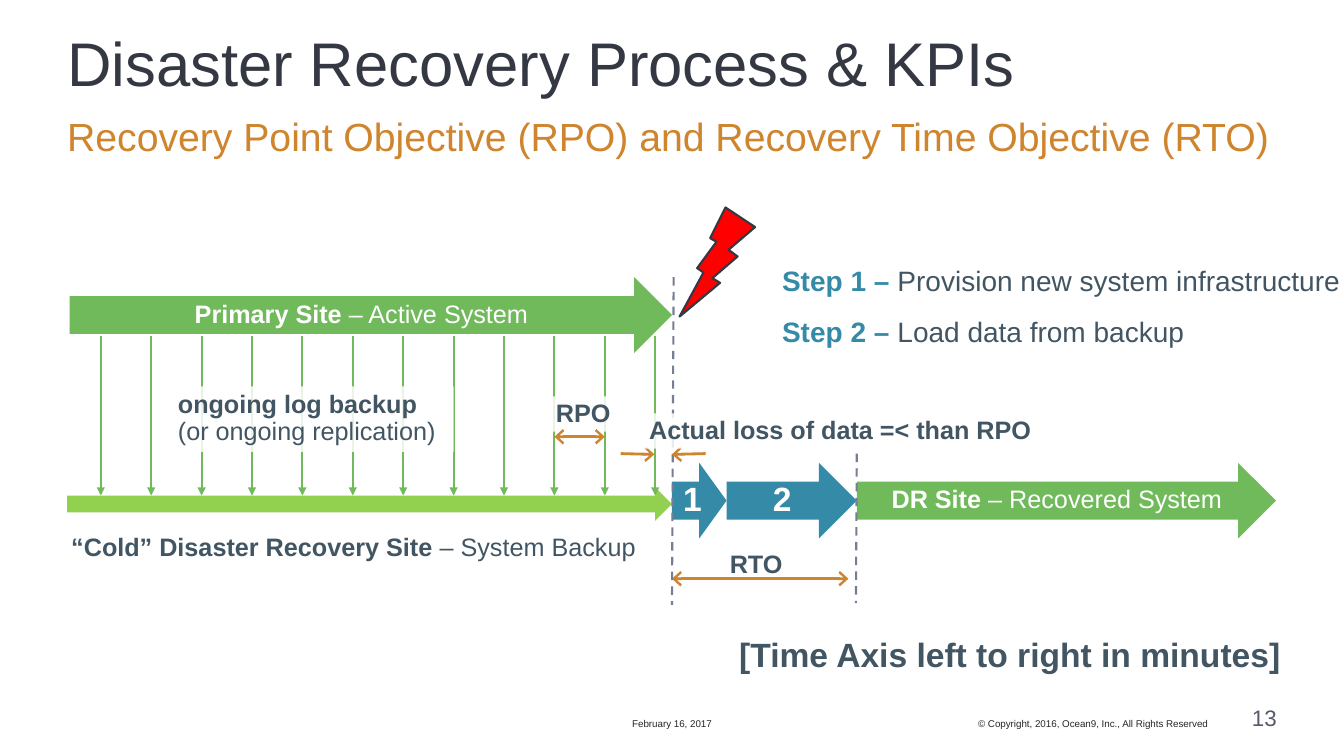
import lxml.etree
import pptx
import pptx.dml.color
import pptx.enum.dml
import pptx.enum.shapes
import pptx.enum.text
import pptx.oxml.ns
import pptx.util

RGB = pptx.dml.color.RGBColor
SHAPE = pptx.enum.shapes.MSO_SHAPE
ALIGN = pptx.enum.text.PP_ALIGN
ANCHOR = pptx.enum.text.MSO_ANCHOR
qn = pptx.oxml.ns.qn

WHITE = RGB(0xFF, 0xFF, 0xFF)
INK = RGB(0x34, 0x38, 0x42)
SLATE = RGB(0x42, 0x55, 0x63)
ORANGE = RGB(0xCF, 0x84, 0x2E)
GREEN = RGB(0x71, 0xBA, 0x5B)
LIME = RGB(0x92, 0xD0, 0x50)
TEAL = RGB(0x34, 0x8A, 0xA7)
RED = RGB(0xFF, 0x00, 0x00)
DASH_GREY = RGB(0x75, 0x7E, 0x94)
FOOTER_GREY = RGB(0x26, 0x26, 0x26)
NUMBER_GREY = RGB(0x55, 0x5B, 0x6B)

COLUMNS, ROWS = 160, 90
CELL = pptx.util.Inches(1 / 12)
DISASTER, RECOVERED = 80, 102
TEXT_INSET = (0.1, 0, 0, 0)
HEAD_WIDTHS = {"triangle": "med", "arrow": "lg"}


def cells(*counts):
    """Turn counts of grid columns or rows into lengths."""
    return [round(n * CELL) for n in counts]


def write(sp, paragraphs, size, color, align=ALIGN.LEFT, spacing=0.9,
          anchor=ANCHOR.TOP, inset=(0, 0, 0, 0), wrap=True):
    """Fill a shape with paragraphs of (text, bold, colour) runs."""
    tf = sp.text_frame
    tf.word_wrap = wrap
    tf.vertical_anchor = anchor
    sides = [pptx.util.Inches(n) for n in inset]
    tf.margin_left, tf.margin_top, tf.margin_right, tf.margin_bottom = sides
    for i, runs in enumerate(paragraphs):
        p = tf.add_paragraph() if i else tf.paragraphs[0]
        p.alignment = align
        p.line_spacing = spacing
        p.font.name = "Arial"
        p.font.size = pptx.util.Pt(size)
        for text, bold, *own_color in runs:
            r = p.add_run()
            r.text = text
            r.font.bold = bold
            r.font.color.rgb = own_color[0] if own_color else color


def add_text(s, box, paragraphs, size, color, **options):
    """Add a text box."""
    write(s.shapes.add_textbox(*cells(*box)), paragraphs, size, color, **options)


def add_block(s, kind, box, fill):
    """Add a filled preset shape without outline or shadow."""
    sp = s.shapes.add_shape(kind, *cells(*box))
    sp.shadow.inherit = False
    sp.fill.solid()
    sp.fill.fore_color.rgb = fill
    sp.line.fill.background()
    return sp


def add_stage(s, box, fill, runs, size=18):
    """Add a labelled block arrow."""
    sp = add_block(s, SHAPE.RIGHT_ARROW, box, fill)
    write(sp, [runs], size, WHITE, align=ALIGN.CENTER, anchor=ANCHOR.MIDDLE,
          inset=(0.1, 0.05, 0.1, 0.05))


def add_label(s, box, paragraphs):
    """Add a label on a translucent white panel."""
    sp = add_block(s, SHAPE.RECTANGLE, box, WHITE)
    tint = sp._element.spPr.find(qn("a:solidFill"))[0]
    lxml.etree.SubElement(tint, qn("a:alpha"), val="85000")
    write(sp, paragraphs, 18, SLATE, anchor=ANCHOR.MIDDLE, inset=TEXT_INSET, wrap=False)


def add_line(s, ends, color, width, head=None, tail=None, dashed=False):
    """Add a straight line with optional arrowheads."""
    line = s.shapes.add_connector(pptx.enum.shapes.MSO_CONNECTOR.STRAIGHT, *cells(*ends))
    line.line.color.rgb = color
    line.line.width = pptx.util.Pt(width)
    if dashed:
        line.line.dash_style = pptx.enum.dml.MSO_LINE.DASH
    ln = line.line._get_or_add_ln()
    for tag, kind in (("a:headEnd", head), ("a:tailEnd", tail)):
        if kind:
            lxml.etree.SubElement(ln, qn(tag), type=kind, w=HEAD_WIDTHS[kind], len="med")
    lxml.etree.SubElement(line._element.spPr, qn("a:effectLst"))


def add_bolt(s):
    """Add the lightning bolt that marks the disaster."""
    sp = add_block(s, SHAPE.LIGHTNING_BOLT, (80.9, 24.7, 9, 13), RED)
    sp.line.color.rgb = INK
    sp.line.width = pptx.util.Pt(1.5)
    sp._element.spPr.find(qn("a:xfrm")).set("flipH", "1")


def add_headings(s):
    """Add the title, subtitle and footer."""
    add_text(s, (8, 4, 144, 9), [[("Disaster Recovery Process & KPIs", False)]], 44, INK)
    add_text(s, (8, 14, 144, 7),
             [[("Recovery Point Objective (RPO) and Recovery Time Objective (RTO)", False)]],
             28, ORANGE)
    footers = [
        ((73.5, 84, 13, 2.8), "February 16, 2017", 7, FOOTER_GREY, ALIGN.CENTER),
        ((91, 84, 52.8, 2.8), "© Copyright, 2016, Ocean9, Inc., All Rights Reserved",
         7, FOOTER_GREY, ALIGN.RIGHT),
        ((145, 84, 7, 3), "13", 16, NUMBER_GREY, ALIGN.RIGHT),
    ]
    for box, text, size, color, align in footers:
        add_text(s, box, [[(text, False)]], size, color, align=align,
                 spacing=1.0, anchor=ANCHOR.BOTTOM, wrap=False)


def add_backup(s):
    """Add the primary site and its backups to the cold site."""
    add_stage(s, (8.3, 33, 71.7, 9), GREEN,
              [("Primary Site ", True), ("– Active System", False)])
    add_block(s, SHAPE.RIGHT_ARROW, (8, 58, 72, 4), LIME)
    add_bolt(s)
    for x in range(12, 79, 6):
        add_line(s, (x, 40, x, 59), GREEN, 1.5, tail="triangle")
    add_label(s, (20, 46, 34, 7.8),
              [[("ongoing log backup", True)], [("(or ongoing replication)", False)]])
    add_label(s, (65, 47.2, 8, 4.2), [[("RPO", True)]])
    add_line(s, (66, 52, 72, 52), ORANGE, 2, head="arrow", tail="arrow")
    add_text(s, (7, 63.1, 71, 4.4),
             [[("“Cold” Disaster Recovery Site ", True), ("– System Backup ", False)]],
             18, SLATE, align=ALIGN.CENTER, inset=(0.1, 0.05, 0.1, 0.05), wrap=False)


def add_recovery(s):
    """Add the recovery steps, the recovered site and the time measures."""
    add_stage(s, (RECOVERED, 55.1, 49.9, 9), GREEN,
              [("DR Site ", True), ("– Recovered System", False)])
    add_stage(s, (DISASTER, 55.1, 6.5, 9), TEAL, [("1", True)], 24)
    add_stage(s, (86.5, 55.1, 15.5, 9), TEAL, [("2", True)], 24)
    steps = [("Step 1 – ", "Provision new system infrastructure"),
             ("Step 2 – ", "Load data from backup")]
    add_text(s, (93.1, 29.4, 66.9, 10.9),
             [[(step, True, TEAL), (task, False)] for step, task in steps],
             20, SLATE, spacing=1.5, wrap=False)
    add_label(s, (85.7, 65.2, 8, 4.2), [[("RTO", True)]])
    add_line(s, (DISASTER, 68.9, 101, 68.9), ORANGE, 2, head="arrow", tail="arrow")
    add_line(s, (80.2, 33, DISASTER, 72), DASH_GREY, 1.5, dashed=True)
    add_line(s, (RECOVERED, 54, 101.9, 71.8), DASH_GREY, 1.5, dashed=True)
    for start, end in ((DISASTER, 84), (77.9, 73.9)):
        add_line(s, (start, 54.1, end, 54), ORANGE, 2, head="arrow")
    add_label(s, (76.1, 49.2, 8, 4.2), [[("Actual loss of data =< than RPO", True)]])
    add_text(s, (88, 76, 68, 4), [[("[Time Axis left to right in minutes]", True)]],
             24, SLATE, wrap=False)


def main():
    """Build the disaster recovery slide."""
    prs = pptx.Presentation()
    prs.slide_width, prs.slide_height = cells(COLUMNS, ROWS)
    s = prs.slides.add_slide(prs.slide_layouts[6])
    add_headings(s)
    add_backup(s)
    add_recovery(s)
    prs.save("out.pptx")


if __name__ == "__main__":
    main()
